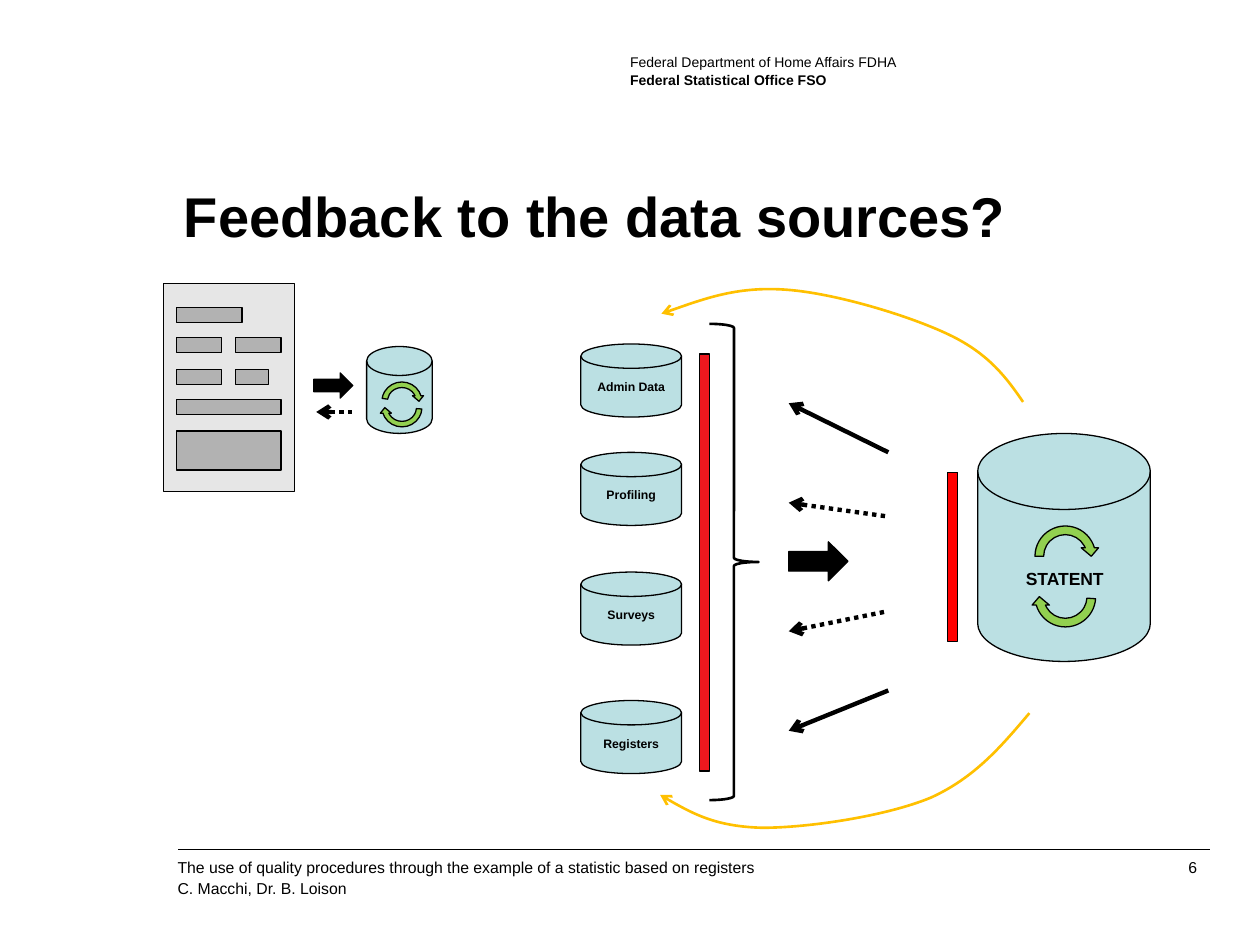
from pptx import Presentation
from pptx.dml.color import RGBColor
from pptx.enum.dml import MSO_LINE
from pptx.enum.shapes import MSO_CONNECTOR, MSO_SHAPE
from pptx.enum.text import MSO_ANCHOR, PP_ALIGN
from pptx.oxml.ns import qn
from pptx.util import Inches, Pt
from lxml import etree

BLACK = RGBColor(0x00, 0x00, 0x00)
WHITE = RGBColor(0xFF, 0xFF, 0xFF)
PALE_BLUE = RGBColor(0xBB, 0xE0, 0xE3)
GREEN = RGBColor(0x92, 0xD0, 0x50)
RED = RGBColor(0xFF, 0x00, 0x00)
DARK_RED = RGBColor(0xED, 0x18, 0x1E)
AMBER = RGBColor(0xFF, 0xC0, 0x00)
LIGHT_GREY = RGBColor(0xE6, 0xE6, 0xE6)
GREY = RGBColor(0xB2, 0xB2, 0xB2)

DISK = MSO_SHAPE.FLOWCHART_MAGNETIC_DISK
PROCESS = MSO_SHAPE.FLOWCHART_PROCESS
RECT = MSO_SHAPE.RECTANGLE
BLOCK_ARROW = MSO_SHAPE.RIGHT_ARROW
CYCLE = MSO_SHAPE.CIRCULAR_ARROW
BRACE = MSO_SHAPE.RIGHT_BRACE
STRAIGHT = MSO_CONNECTOR.STRAIGHT
DOTTED = MSO_LINE.ROUND_DOT
LEFT, CENTER, RIGHT = PP_ALIGN.LEFT, PP_ALIGN.CENTER, PP_ALIGN.RIGHT
TOP = MSO_ANCHOR.TOP

prs = Presentation()
prs.slide_width, prs.slide_height = Inches(10), Inches(7.5)
s = prs.slides.add_slide(prs.slide_layouts[5])


def add_filled(kind, x, y, w, h, fill, weight=0.75):
    """Add a preset shape with a solid fill and a black outline."""
    sp = s.shapes.add_shape(kind, Inches(x), Inches(y), Inches(w), Inches(h))
    sp.shadow.inherit = False
    sp.fill.solid()
    sp.fill.fore_color.rgb = fill
    sp.line.color.rgb = BLACK
    sp.line.width = Pt(weight)
    return sp


def add_text(text, x, y, w, h, size, align=LEFT, bold=False, inset=0, spacing=None):
    """Add a one-paragraph text box and return its paragraph."""
    tf = s.shapes.add_textbox(Inches(x), Inches(y), Inches(w), Inches(h)).text_frame
    tf.word_wrap = True
    tf.margin_left = tf.margin_right = Inches(2 * inset)
    tf.margin_top = tf.margin_bottom = Inches(inset)
    tf.text = text
    p = tf.paragraphs[0]
    p.alignment = align
    p.line_spacing = spacing
    for r in p.runs:
        r.font.name = "Arial"
        r.font.size = Pt(size)
        r.font.bold = bold
        r.font.color.rgb = BLACK
    return p


# Header, footer and title
p = add_text("Federal Department of Home Affairs FDHA\vFederal Statistical Office FSO",
             5, 0.42, 3.92, 0.28, 8, spacing=1.05)
p.runs[1].font.bold = True
add_text("The use of quality procedures through the example of a statistic "
         "based on registers\vC. Macchi, Dr. B. Loison",
         1.41, 6.79, 7.5, 0.34, 9, spacing=Pt(12))
add_text("6", 7.05, 6.79, 2.45, 0.17, 9, align=RIGHT, spacing=Pt(12))

title = s.shapes.title
title.left, title.top = Inches(1.46), Inches(1.47)
title.width, title.height = Inches(8.16), Inches(0.95)
tf = title.text_frame
tf.margin_left = tf.margin_right = tf.margin_top = tf.margin_bottom = 0
tf.vertical_anchor = TOP
tf.text = "Feedback to the data sources?"
p = tf.paragraphs[0]
p.alignment = LEFT
p.line_spacing = Pt(36)
font = p.runs[0].font
font.name, font.size, font.bold = "Arial", Pt(32), True
font.color.rgb = BLACK

# Data sources, filters and central register
for name, y in [("Admin Data", 2.73), ("Profiling", 3.59), ("Surveys", 4.54), ("Registers", 5.56)]:
    add_filled(DISK, 4.61, y, 0.8, 0.58, PALE_BLUE)
    add_text(name, 4.61, y + 0.23, 0.8, 0.22, 7, CENTER, True, inset=0.05)

add_filled(PROCESS, 7.52, 3.75, 0.08, 1.34, RED)
add_filled(DISK, 7.76, 3.44, 1.37, 1.81, PALE_BLUE)
add_text("STATENT", 7.94, 4.46, 1.02, 0.27, 10, CENTER, True, inset=0.05)
add_filled(BRACE, 5.63, 2.57, 0.39, 3.78, WHITE, 1.5)
add_filled(BLOCK_ARROW, 6.26, 4.3, 0.47, 0.31, BLACK)
add_filled(PROCESS, 5.55, 2.81, 0.08, 3.31, DARK_RED)

# Questionnaire and its data store
add_filled(RECT, 1.3, 2.25, 1.04, 1.65, LIGHT_GREY)
for x, y, w, h in [(1.4, 2.44, 0.52, 0.12), (1.4, 2.68, 0.36, 0.12), (1.87, 2.68, 0.36, 0.12),
                   (1.4, 2.93, 0.36, 0.12), (1.87, 2.93, 0.26, 0.12),
                   (1.4, 3.17, 0.83, 0.12), (1.4, 3.42, 0.83, 0.31)]:
    add_filled(RECT, x, y, w, h, GREY)
add_filled(DISK, 2.91, 2.75, 0.52, 0.69, PALE_BLUE)
add_filled(BLOCK_ARROW, 2.49, 2.96, 0.31, 0.2, BLACK)

# Processing cycles inside the two stores
for x, y, w, h, rotation, start_angle in [(8.18, 4.14, 0.55, 0.55, 0, 108),
                                          (8.18, 4.46, 0.55, 0.55, 180, 110.44),
                                          (3.01, 3.01, 0.36, 0.35, 0, 113),
                                          (3.01, 3.06, 0.36, 0.35, 180, 110.44)]:
    sp = add_filled(CYCLE, x, y, w, h, GREEN)
    sp.rotation = rotation
    sp.adjustments[3] = start_angle

# Straight lines: the footer rule, then feedback arrows pointing at their start
arrows = []
for x1, y1, x2, y2, weight, dash in [(9.6, 6.74, 1.41, 6.74, 0.75, None),
                                     (6.26, 3.2, 7.05, 3.59, 2.5, None),
                                     (6.26, 3.99, 7.05, 4.1, 2.5, DOTTED),
                                     (6.26, 5.01, 7.05, 4.85, 2.5, DOTTED),
                                     (6.26, 5.8, 7.05, 5.48, 2.5, None),
                                     (2.51, 3.27, 2.79, 3.27, 2.5, DOTTED)]:
    line = s.shapes.add_connector(STRAIGHT, Inches(x1), Inches(y1), Inches(x2), Inches(y2))
    line.line.color.rgb = BLACK
    line.line.width = Pt(weight)
    line.line.dash_style = dash
    etree.SubElement(line._element.spPr, qn("a:effectLst"))
    if weight > 1:
        arrows.append(line)

# Curved feedback: a start point, then three Bezier points per segment
for points in [
    [(5.25, 2.49), (5.56, 2.38), (5.87, 2.27), (6.25, 2.3), (6.64, 2.33),
     (7.23, 2.51), (7.54, 2.66), (7.85, 2.81), (7.99, 3), (8.12, 3.19)],
    [(5.24, 6.31), (5.46, 6.44), (5.69, 6.56), (6.05, 6.57), (6.41, 6.57),
     (7.03, 6.48), (7.39, 6.33), (7.74, 6.17), (7.95, 5.92), (8.17, 5.66)],
]:
    emu = [(Inches(x), Inches(y)) for x, y in points]
    builder = s.shapes.build_freeform(*emu[0])
    builder.add_line_segments(emu[1:], close=False)
    curve = builder.convert_to_shape()
    curve.shadow.inherit = False
    curve.fill.background()
    curve.line.color.rgb = AMBER
    curve.line.width = Pt(1.5)
    outline = next(curve._element.iter(qn("a:path")))
    segments = outline.findall(qn("a:lnTo"))
    for i in range(0, len(segments), 3):
        bezier = etree.SubElement(outline, qn("a:cubicBezTo"))
        for segment in segments[i:i + 3]:
            bezier.append(segment[0])
            outline.remove(segment)
    arrows.append(curve)

for arrow in arrows:
    ln = arrow._element.spPr.find(qn("a:ln"))
    etree.SubElement(ln, qn("a:headEnd"), type="arrow")

prs.save("out.pptx")
